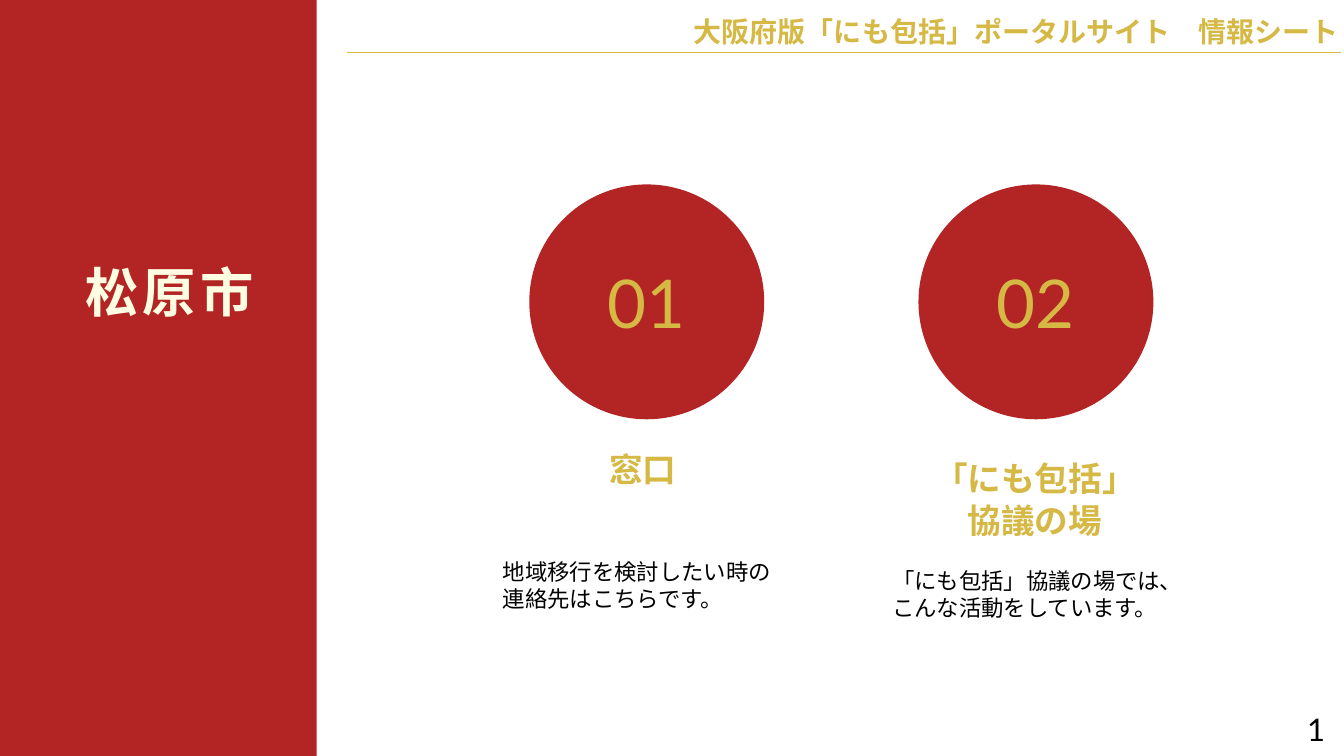
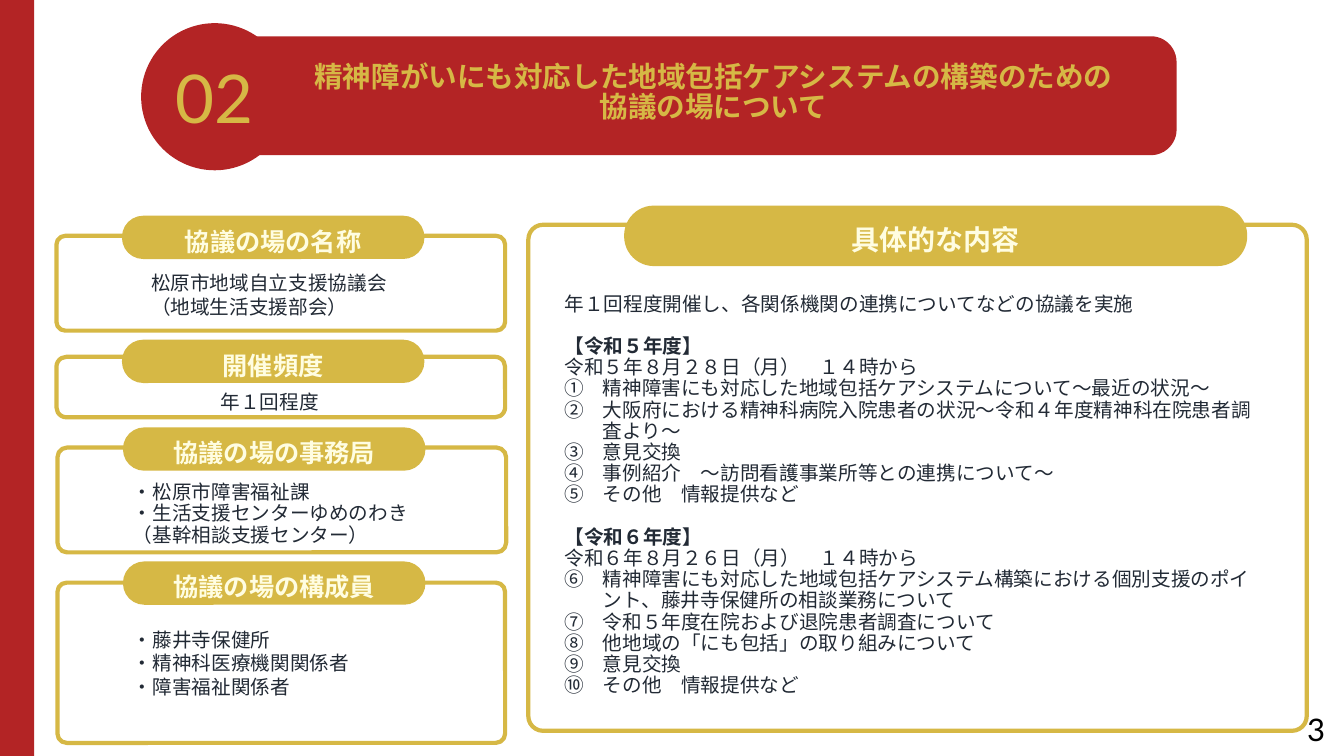
from lxml import etree
from pptx import Presentation
from pptx.dml.color import RGBColor
from pptx.enum.shapes import MSO_CONNECTOR, MSO_SHAPE
from pptx.enum.text import MSO_ANCHOR, PP_ALIGN
from pptx.oxml.ns import qn
from pptx.util import Inches, Pt

RECT, ROUND, OVAL = MSO_SHAPE.RECTANGLE, MSO_SHAPE.ROUNDED_RECTANGLE, MSO_SHAPE.OVAL
LEFT, CENTER, RIGHT = PP_ALIGN.LEFT, PP_ALIGN.CENTER, PP_ALIGN.RIGHT
TOP, MIDDLE = MSO_ANCHOR.TOP, MSO_ANCHOR.MIDDLE
RED, GOLD, CREAM, WHITE = "B32425", "D6B845", "FFFDE1", "FFFFFF"
BLACK, INK = "000000", "222A35"
JP, LATIN, TITLE = "Noto Sans CJK JP", "Lato", "Arial"
WIDTH, HEIGHT = 13.33, 7.5


def add_box(s, box, kind=None, fill=WHITE, line=None, adj=None):
    """Add a preset shape, or a text box when kind is None; box is in inches."""
    box = [Inches(v) for v in box]
    if kind is None:
        return s.shapes.add_textbox(*box)
    sp = s.shapes.add_shape(kind, *box)
    sp.shadow.inherit = False
    sp.fill.solid()
    sp.fill.fore_color.rgb = RGBColor.from_string(fill)
    if line:
        sp.line.color.rgb = RGBColor.from_string(line)
        sp.line.width = Pt(3)
    else:
        sp.line.fill.background()
    if adj is not None:
        sp.adjustments[0] = adj
    return sp


def write(sp, lines, size, color, align=LEFT, bold=False, font=JP, spacing=None, anchor=TOP):
    """Write one paragraph per line and return the paragraphs."""
    tf = sp.text_frame
    tf.word_wrap = True
    tf.vertical_anchor = anchor
    for i, line in enumerate(lines):
        p = tf.add_paragraph() if i else tf.paragraphs[0]
        p.text = line
        p.alignment = align
        if spacing:
            p.line_spacing = spacing
        for r in p.runs:
            r.font.size = Pt(size)
            r.font.bold = bold
            r.font.color.rgb = RGBColor.from_string(color)
            r.font.name = font
            ea = etree.SubElement(r.font._element, qn("a:ea"))
            ea.set("typeface", JP if font == TITLE else font)
    return tf.paragraphs


prs = Presentation()
prs.slide_width, prs.slide_height = Inches(WIDTH), Inches(HEIGHT)
slides = []
for number, band in (("1", 3.14), ("3", 0.34)):
    s = prs.slides.add_slide(prs.slide_layouts[6])
    write(add_box(s, (10.13, 7, 3.11, 0.4)), [number], 22.2, BLACK, RIGHT, font=LATIN)
    add_box(s, (0, 0, band, HEIGHT), RECT, RED)
    slides.append(s)
cover, detail = slides

# Cover: city name, header and two topics
name = write(add_box(cover, (0.36, 2.65, 2.64, 0.7)), ["松原市"], 38, CREAM, CENTER,
             True, TITLE, 0.8)
name[0].runs[0].font._element.set("spc", "300")
write(add_box(cover, (3.83, 0.09, 9.55, 0.44)), ["大阪府版「にも包括」ポータルサイト　情報シート"],
      20, GOLD, RIGHT, True)
rule = cover.shapes.add_connector(MSO_CONNECTOR.STRAIGHT, Inches(3.44), Inches(0.52),
                                  Inches(13.3), Inches(0.52))
rule.line.color.rgb = RGBColor.from_string(GOLD)
rule.line.width = Pt(0.75)
etree.SubElement(rule._element.spPr, qn("a:effectLst"))

# Number, heading, heading box, body, body left
TOPICS = [
    ("01", "窓口", (4.85, 4.39, 3.05, 1),
     "地域移行を検討したい時の連絡先はこちらです。", 4.89),
    ("02", "「にも包括」\n協議の場", (8.65, 4.48, 3.23, 1),
     "「にも包括」協議の場では、こんな活動をしています。", 8.75),
]
for i, (number, heading, heading_box, body, body_left) in enumerate(TOPICS):
    write(add_box(cover, (5.25 + 3.86 * i, 1.83, 2.33, 2.33), OVAL, RED), [number], 48, GOLD,
          CENTER, font=LATIN, anchor=MIDDLE)
    write(add_box(cover, heading_box), [heading], 24, GOLD, CENTER, True, spacing=Pt(30))
    write(add_box(cover, (body_left, heading_box[1] + 1.1, 3.05, 1.16)), [body], 16, BLACK)

# Detail: title banner
add_box(detail, (1.66, 0.36, 10.01, 1.18), ROUND, RED, adj=0.216)
write(add_box(detail, (2.94, 0.57, 8.27, 0.98)),
      ["精神障がいにも対応した地域包括ケアシステムの構築のための\n協議の場について"],
      20.4, GOLD, CENTER, True, spacing=0.9)
write(add_box(detail, (1.4, 0.23, 1.46, 1.46), OVAL, RED), ["02"], 48, GOLD, CENTER,
      font=LATIN, anchor=MIDDLE)

# Framed cards: frame, corner, label, label box, label size, label inset
CARDS = [
    ((0.56, 2.34, 4.45, 0.94), 0.092, "協議の場の名称", (1.21, 2.14, 3, 0.43), 18, 0.04),
    ((0.56, 3.54, 4.45, 0.6), 0.165, "開催頻度", (1.21, 3.37, 3, 0.43), 18, 0.04),
    ((0.57, 4.44, 4.45, 1.04), 0.092, "協議の場の事務局", (1.22, 4.24, 3, 0.43), 18, 0.04),
    ((0.57, 5.78, 4.44, 1.59), 0.058, "協議の場の構成員", (1.22, 5.57, 3, 0.43), 18, 0.04),
    ((5.24, 2.23, 7.72, 5.02), 0.029, "具体的な内容", (6.19, 2.04, 6.18, 0.6), 20, 0.08),
]
for frame, corner, label, label_box, size, inset in CARDS:
    add_box(detail, frame, ROUND, WHITE, GOLD, corner)
    pill = add_box(detail, label_box, ROUND, GOLD, adj=0.491)
    pill.text_frame.margin_top = Inches(inset)
    write(pill, [label], size, CREAM, CENTER, True)

CARD_TEXTS = [
    ((1.4, 2.64, 3.14, 0.59), ["松原市地域自立支援協議会", "（地域生活支援部会）"], LEFT, None),
    ((1.03, 3.82, 3.29, 0.41), ["年１回程度"], CENTER, None),
    ((1.22, 4.74, 3, 0.79),
     ["・松原市障害福祉課", "・生活支援センターゆめのわき", "（基幹相談支援センター）"], LEFT, 0.9),
    ((1.22, 6.18, 3.29, 0.94),
     ["・藤井寺保健所", "・精神科医療機関関係者", "・障害福祉関係者"], LEFT, None),
]
for box, lines, align, spacing in CARD_TEXTS:
    write(add_box(detail, box), lines, 14, INK, align, spacing=spacing)

# Meetings by year, with agenda numbers running on
INTRO = "年１回程度開催し、各関係機関の連携についてなどの協議を実施"
MEETINGS = [
    ("【令和５年度】", "令和５年８月２８日（月）　１４時から", [
        "精神障害にも対応した地域包括ケアシステムについて～最近の状況～",
        "大阪府における精神科病院入院患者の状況～令和４年度精神科在院患者調査より～",
        "意見交換",
        "事例紹介　～訪問看護事業所等との連携について～",
        "その他　情報提供など"]),
    ("【令和６年度】", "令和６年８月２６日（月）　１４時から", [
        "精神障害にも対応した地域包括ケアシステム構築における個別支援のポイント、"
        "藤井寺保健所の相談業務について",
        "令和５年度在院および退院患者調査について",
        "他地域の「にも包括」の取り組みについて",
        "意見交換",
        "その他　情報提供など"]),
]
lines = [INTRO]
for year, date, agenda in MEETINGS:
    lines += [year, date, *agenda]
paragraphs = iter(write(add_box(detail, (5.5, 2.87, 7.08, 4.25)), lines, 14, INK, spacing=0.9))
next(paragraphs)
start = 1
for year, date, agenda in MEETINGS:
    p = next(paragraphs)
    p.space_before = Pt(15.1)
    p.runs[0].font.bold = True
    next(paragraphs)
    for item in agenda:
        pPr = next(paragraphs)._p.get_or_add_pPr()
        pPr.set("marL", str(Inches(0.38)))
        pPr.set("indent", str(-Inches(0.38)))
        bullet = etree.SubElement(pPr, qn("a:buAutoNum"))
        bullet.set("type", "circleNumDbPlain")
        bullet.set("startAt", str(start))
    start += len(agenda)

prs.save("out.pptx")
